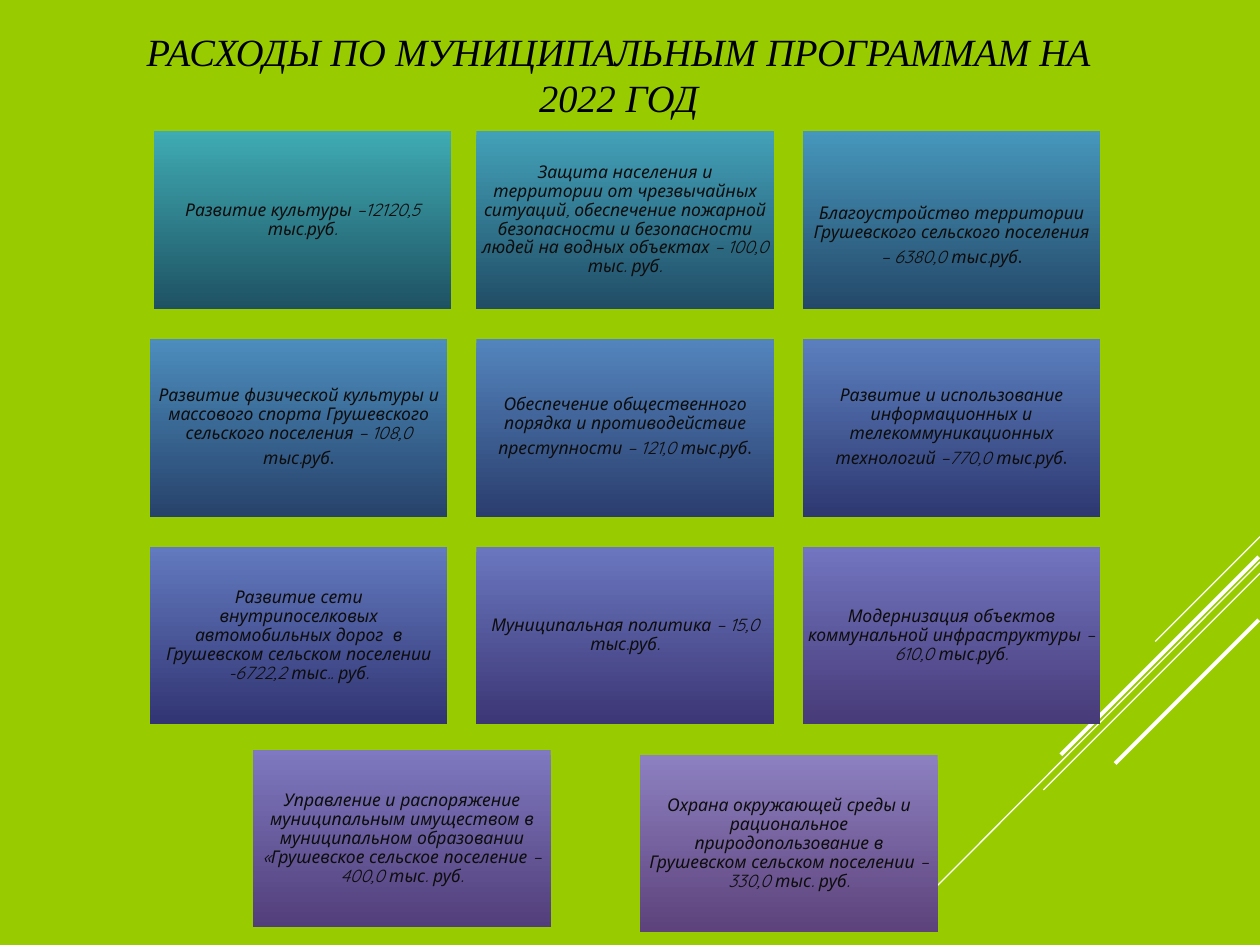
from dataclasses import dataclass

from lxml import etree
from pptx import Presentation
from pptx.dml.color import RGBColor
from pptx.enum.shapes import MSO_CONNECTOR, MSO_SHAPE
from pptx.enum.text import MSO_ANCHOR, MSO_AUTO_SIZE, PP_ALIGN
from pptx.oxml.ns import qn
from pptx.slide import Slide
from pptx.util import Pt

STRAIGHT = MSO_CONNECTOR.STRAIGHT
RECTANGLE = MSO_SHAPE.RECTANGLE
MIDDLE = MSO_ANCHOR.MIDDLE
CENTER = PP_ALIGN.CENTER
NO_AUTOFIT = MSO_AUTO_SIZE.NONE

LIME = RGBColor(0x99, 0xCC, 0x00)
WHITE = RGBColor(0xFF, 0xFF, 0xFF)
BLACK = RGBColor(0x00, 0x00, 0x00)
INK = RGBColor(0x0D, 0x0D, 0x0D)

TITLE_FONT = "Times New Roman"
PROGRAM_FONT = "Quicksand"

CARD_WIDTH, CARD_HEIGHT = 170, 101.5
COLUMNS = [85.7 + 186.5 * column for column in range(3)]
ROWS = [74.9 + 118.8 * row for row in range(3)]
INSET = 3


@dataclass(frozen=True)
class Ray:
    x1: float
    y1: float
    x2: float
    y2: float
    weight: float


@dataclass(frozen=True)
class Program:
    text: str
    left: float
    top: float
    light: RGBColor
    dark: RGBColor
    large_stop: bool = False
    top_inset: float = INSET


RAYS = [
    Ray(720, 306.7, 660.2, 366.5, 0.75),
    Ray(720, 321.1, 525.6, 516.2, 0.75),
    Ray(720, 327.6, 596.2, 451.4, 0.75),
    Ray(719.3, 318.2, 606.2, 431.3, 2.25),
    Ray(719.3, 354.2, 637.2, 436.3, 2.25),
]

PROGRAMS = [
    Program("Развитие культуры –12120,5 тыс.руб.", 88, ROWS[0],
            RGBColor(0x3F, 0xAB, 0xB3), RGBColor(0x1E, 0x52, 0x63)),
    Program("Защита населения и территории от чрезвычайных ситуаций, обеспечение пожарной "
            "безопасности и безопасности людей на водных объектах – 100,0 тыс. руб.",
            COLUMNS[1], ROWS[0],
            RGBColor(0x42, 0xA1, 0xB8), RGBColor(0x21, 0x4D, 0x66)),
    Program("Благоустройство территории Грушевского сельского поселения – 6380,0 тыс.руб",
            COLUMNS[2], ROWS[0],
            RGBColor(0x46, 0x97, 0xBC), RGBColor(0x24, 0x48, 0x69), True, 22),
    Program("Развитие физической культуры и массового спорта Грушевского сельского "
            "поселения – 108,0 тыс.руб", COLUMNS[0], ROWS[1],
            RGBColor(0x4C, 0x8D, 0xBD), RGBColor(0x27, 0x42, 0x6B), True),
    Program("Обеспечение общественного порядка и противодействие преступности – 121,0 тыс.руб",
            COLUMNS[1], ROWS[1],
            RGBColor(0x53, 0x85, 0xBD), RGBColor(0x2B, 0x3D, 0x6E), True),
    Program("Развитие и использование информационных и телекоммуникационных технологий "
            "–770,0 тыс.руб", COLUMNS[2], ROWS[1],
            RGBColor(0x5B, 0x7F, 0xBE), RGBColor(0x2E, 0x38, 0x71), True),
    Program("Развитие сети внутрипоселковых автомобильных дорог  в Грушевском сельском "
            "поселении -6722,2 тыс.. руб.", COLUMNS[0], ROWS[2],
            RGBColor(0x62, 0x7A, 0xBF), RGBColor(0x32, 0x34, 0x73)),
    Program("Муниципальная политика – 15,0 тыс.руб.", COLUMNS[1], ROWS[2],
            RGBColor(0x6A, 0x77, 0xBF), RGBColor(0x3C, 0x36, 0x75)),
    Program("Модернизация объектов коммунальной инфраструктуры –610,0 тыс.руб.",
            COLUMNS[2], ROWS[2],
            RGBColor(0x72, 0x75, 0xC0), RGBColor(0x47, 0x3A, 0x78)),
    Program("Управление и распоряжение муниципальным имуществом в муниципальном образовании "
            "«Грушевское сельское поселение – 400,0 тыс. руб.", 144.7, 428.4,
            RGBColor(0x7E, 0x79, 0xC0), RGBColor(0x52, 0x3E, 0x7A)),
    Program("Охрана окружающей среды и рациональное природопользование в Грушевском "
            "сельском поселении – 330,0 тыс. руб.", 365.8, 431.3,
            RGBColor(0x8D, 0x81, 0xC1), RGBColor(0x5D, 0x42, 0x7B)),
]


def draw_ray(slide: Slide, ray: Ray) -> None:
    line = slide.shapes.add_connector(
        STRAIGHT, Pt(ray.x1), Pt(ray.y1), Pt(ray.x2), Pt(ray.y2))
    line.line.color.rgb = WHITE
    line.line.width = Pt(ray.weight)
    etree.SubElement(line._element.spPr, qn("a:effectLst"))


def draw_program(slide: Slide, program: Program) -> None:
    card = slide.shapes.add_shape(
        RECTANGLE, Pt(program.left), Pt(program.top), Pt(CARD_WIDTH), Pt(CARD_HEIGHT))
    card.shadow.inherit = False
    card.line.fill.background()
    card.fill.gradient()
    card.fill.gradient_angle = 270
    for stop, color in zip(card.fill.gradient_stops, (program.light, program.dark)):
        stop.color.rgb = color

    frame = card.text_frame
    frame.word_wrap = True
    frame.vertical_anchor = MIDDLE
    frame.margin_left = frame.margin_right = frame.margin_bottom = Pt(INSET)
    frame.margin_top = Pt(program.top_inset)
    frame.text = program.text
    paragraph = frame.paragraphs[0]
    paragraph.alignment = CENTER
    paragraph.line_spacing = 0.9
    if program.large_stop:
        paragraph.add_run().text = "."
    for run in paragraph.runs:
        run.font.name = PROGRAM_FONT
        run.font.size = Pt(10)
        run.font.italic = True
        run.font.color.rgb = INK
    if program.large_stop:
        full_stop = paragraph.runs[-1].font
        full_stop.size = Pt(14)
        full_stop.italic = False


def set_title(slide: Slide, text: str) -> None:
    title = slide.shapes.title
    title.left, title.top, title.width, title.height = Pt(65.5), Pt(9.4), Pt(576), Pt(66.2)
    frame = title.text_frame
    frame.text = text
    frame.word_wrap = True
    frame.auto_size = NO_AUTOFIT
    frame.vertical_anchor = MIDDLE
    heading = frame.paragraphs[0]
    heading.alignment = CENTER
    font = heading.runs[0].font
    font.name = TITLE_FONT
    font.size = Pt(22)
    font.italic = True
    font.color.rgb = BLACK


def main() -> None:
    presentation = Presentation()
    presentation.slide_width, presentation.slide_height = Pt(720), Pt(540)
    slide = presentation.slides.add_slide(presentation.slide_layouts[5])
    slide.background.fill.solid()
    slide.background.fill.fore_color.rgb = LIME
    for ray in RAYS:
        draw_ray(slide, ray)
    set_title(slide, "РАСХОДЫ ПО МУНИЦИПАЛЬНЫМ ПРОГРАММАМ НА 2022 ГОД")
    for program in PROGRAMS:
        draw_program(slide, program)
    presentation.save("out.pptx")


if __name__ == "__main__":
    main()
